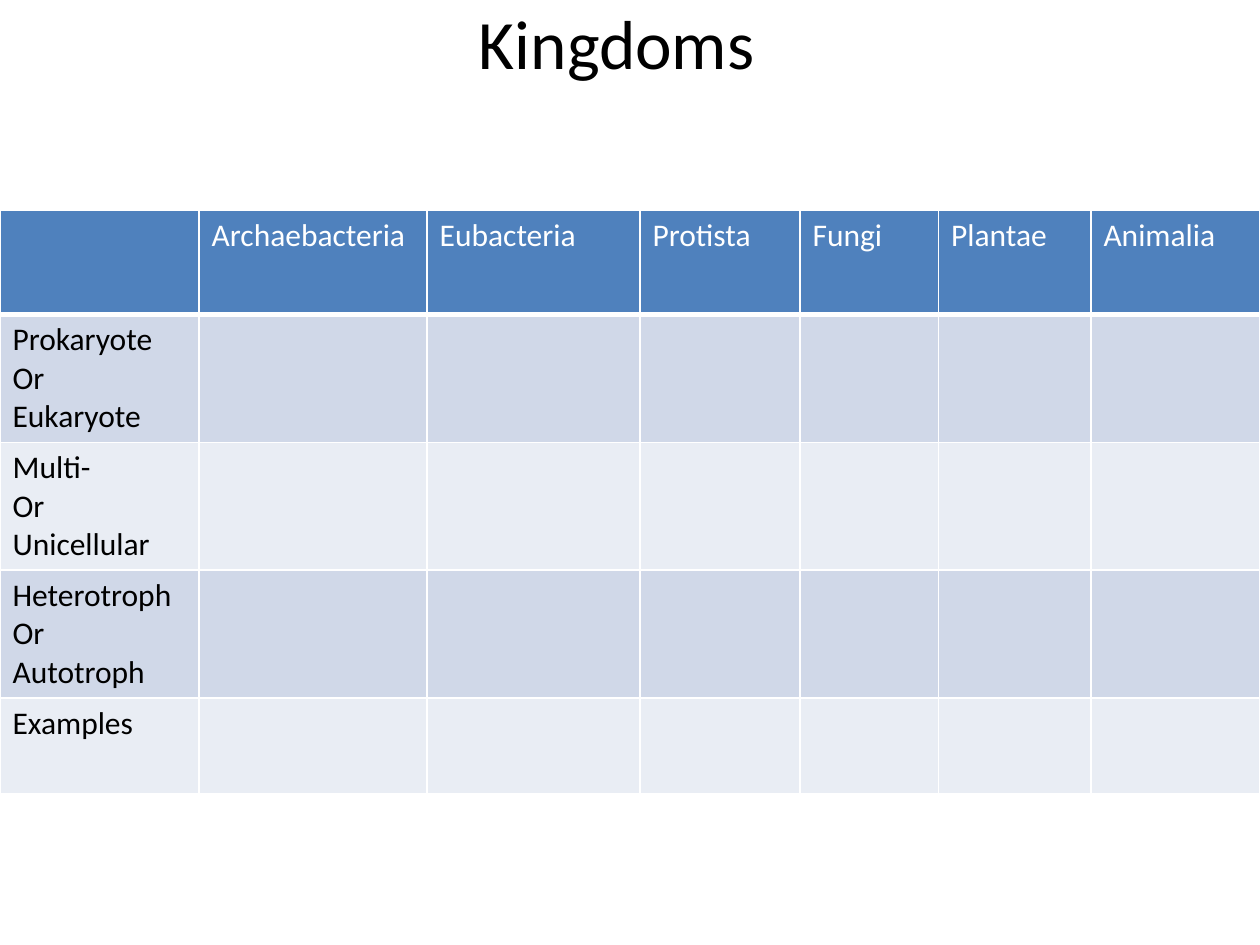
from lxml import etree
from pptx import Presentation
from pptx.dml.color import RGBColor
from pptx.enum import text
from pptx.oxml import ns
from pptx.util import Pt

FONT = "Calibri"
BLACK = RGBColor(0x00, 0x00, 0x00)
WHITE = RGBColor(0xFF, 0xFF, 0xFF)
HEADER_BLUE = RGBColor(0x4F, 0x81, 0xBD)
BANDS = [RGBColor(0xD0, 0xD8, 0xE8), RGBColor(0xE9, 0xED, 0xF4)]

KINGDOMS = ["Archaebacteria", "Eubacteria", "Protista", "Fungi", "Plantae", "Animalia"]
TRAITS = ["Prokaryote\nOr\nEukaryote", "Multi-\nOr\nUnicellular",
          "Heterotroph\nOr\nAutotroph", "Examples"]
COL_WIDTHS = [113.8, 130.3, 121.7, 91.4, 79.2, 87.1, 96.5]
ROW_HEIGHTS = [59.8, 73, 73, 73, 54.7]


def style_text(tf, size, color):
    for p in tf.paragraphs:
        for r in p.runs:
            r.font.name = FONT
            r.font.size = Pt(size)
            r.font.bold = False
            r.font.color.rgb = color


def add_title(s, left, top, width, height):
    tf = s.shapes.add_textbox(Pt(left), Pt(top), Pt(width), Pt(height)).text_frame
    tf.word_wrap = True
    tf.margin_top = 0
    tf.vertical_anchor = text.MSO_ANCHOR.TOP
    tf.text = " Kingdoms"
    tf.paragraphs[0].alignment = text.PP_ALIGN.CENTER
    style_text(tf, 39.6, BLACK)


def set_borders(cell, color, bottom=1):
    """Draw 1 pt lines round a cell; the bottom one may be heavier."""
    tc_pr = cell._tc.get_or_add_tcPr()
    for i, (side, width) in enumerate(zip("LRTB", (1, 1, 1, bottom))):
        ln = etree.Element(ns.qn(f"a:ln{side}"), w=str(Pt(width)))
        fill = etree.SubElement(ln, ns.qn("a:solidFill"))
        etree.SubElement(fill, ns.qn("a:srgbClr"), val=str(color))
        tc_pr.insert(i, ln)


def add_kingdom_table(s, left, top, width, height):
    rows = [["", *KINGDOMS]] + [[trait] + [""] * len(KINGDOMS) for trait in TRAITS]
    table = s.shapes.add_table(len(rows), len(rows[0]), Pt(left), Pt(top),
                               Pt(width), Pt(height)).table
    for col, share in zip(table.columns, COL_WIDTHS):
        col.width = Pt(width * share / sum(COL_WIDTHS))
    for row, share in zip(table.rows, ROW_HEIGHTS):
        row.height = Pt(height * share / sum(ROW_HEIGHTS))
    for i, values in enumerate(rows):
        header = i == 0
        for j, value in enumerate(values):
            cell = table.cell(i, j)
            cell.fill.solid()
            cell.fill.fore_color.rgb = HEADER_BLUE if header else BANDS[(i - 1) % 2]
            set_borders(cell, WHITE, bottom=3 if header else 1)
            if value:
                cell.text_frame.text = value
                style_text(cell.text_frame, 18, WHITE if header else BLACK)


def main():
    prs = Presentation()
    prs.slide_width, prs.slide_height = Pt(720), Pt(540)
    s = prs.slides.add_slide(prs.slide_layouts[6])
    add_title(s, 42, 0, 612, 90)
    add_kingdom_table(s, 0, 120, 720, 333.5)
    prs.save("out.pptx")


if __name__ == "__main__":
    main()
